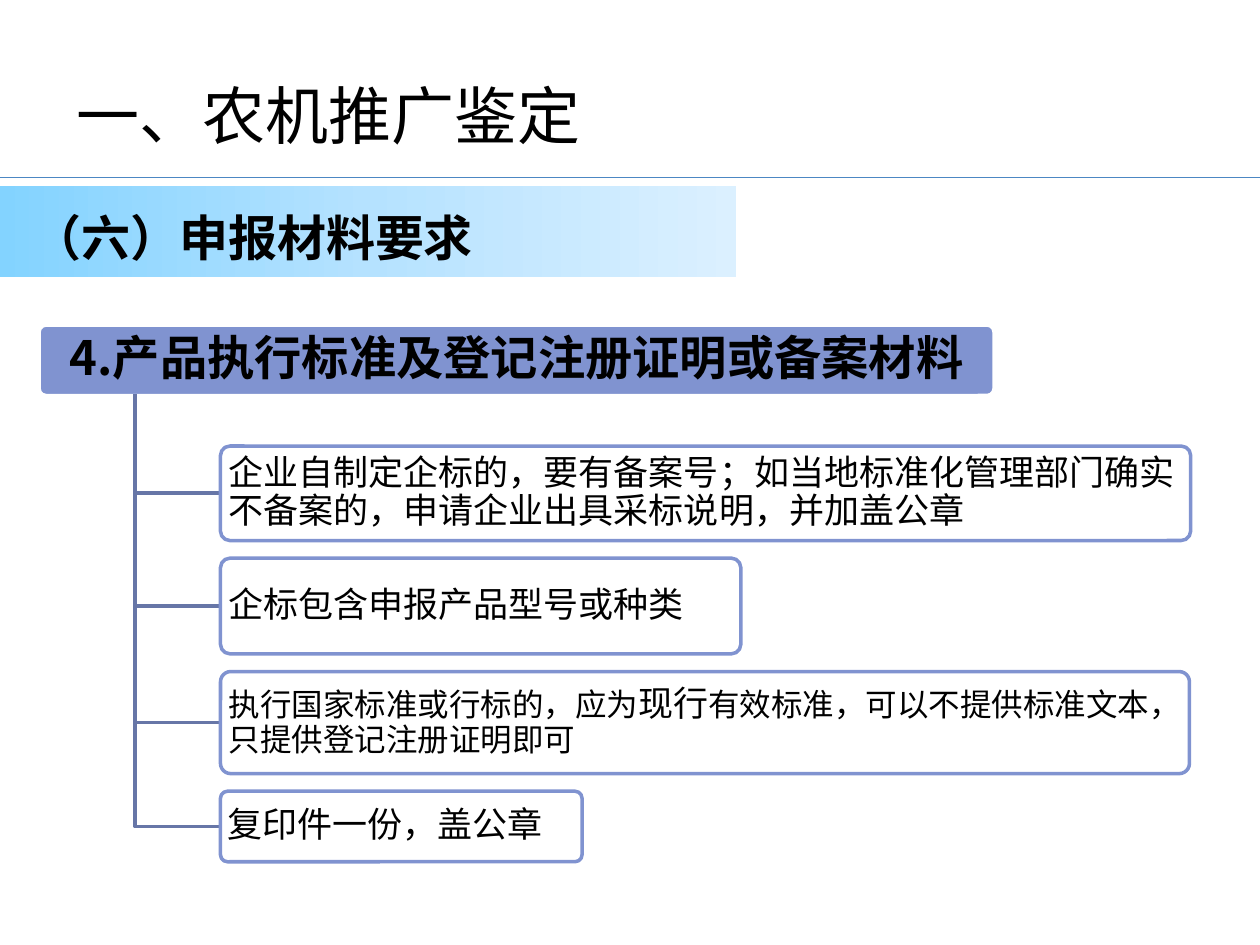
from copy import deepcopy
from dataclasses import dataclass

from lxml.etree import SubElement
from pptx import Presentation
from pptx.dml.color import RGBColor
from pptx.enum.shapes import MSO_CONNECTOR, MSO_SHAPE
from pptx.enum.text import MSO_ANCHOR, PP_ALIGN
from pptx.oxml.ns import qn
from pptx.util import Inches, Pt


@dataclass(frozen=True)
class Theme:
    font: str = "Noto Sans CJK SC"
    ink: str = "000000"
    paper: str = "FFFFFF"
    rule: str = "4C87C3"
    blue: str = "8093D0"
    branch: str = "6776A7"
    band: tuple = ((0, "83D3FF"), (0.5, "B5E2FF"), (1, "DBF0FF"))
    title: int = 36
    section: int = 28
    head: int = 27
    body: int = 20
    small: int = 18


@dataclass(frozen=True)
class Item:
    top: float
    width: float
    height: float
    runs: tuple  # (text, size) pairs


LOOK = Theme()
TRUNK, ROOT, LEFT = 1.07, 3.13, 1.75  # trunk x, trunk top, item left

ITEMS = (
    Item(3.54, 7.7, 0.75, (
        ("企业自制定企标的，要有备案号；如当地标准化管理部门确实"
         "不备案的，申请企业出具采标说明，并加盖公章", LOOK.body),)),
    Item(4.43, 4.13, 0.76, (("企标包含申报产品型号或种类", LOOK.body),)),
    Item(5.33, 7.69, 0.81, (
        ("执行国家标准或行标的，应为", LOOK.small),
        ("现行", LOOK.body),
        ("有效标准，可以不提供标准文本，只提供登记注册证明即可", LOOK.small))),
    Item(6.28, 2.87, 0.56, (("复印件一份，盖公章", LOOK.body),)),
)


def color(code: str) -> RGBColor:
    return RGBColor.from_string(code)


def write(shape, runs: tuple, pads: tuple, bold: bool = False,
          align=PP_ALIGN.LEFT, anchor=MSO_ANCHOR.MIDDLE, lead: float = 1.0) -> None:
    """Fill a shape with one paragraph; pads are the side and end insets."""
    frame = shape.text_frame
    frame.word_wrap = True
    frame.vertical_anchor = anchor
    frame.margin_left = frame.margin_right = Inches(pads[0])
    frame.margin_top = frame.margin_bottom = Inches(pads[1])
    para = frame.paragraphs[0]
    para.alignment = align
    para.line_spacing = lead
    font = para.font
    font.name, font.bold = LOOK.font, bold
    font.color.rgb = color(LOOK.ink)
    same = len({size for _, size in runs}) == 1
    if same:
        font.size = Pt(runs[0][1])
    for text, size in runs:
        run = para.add_run()
        run.text = text
        run.font.color.rgb = color(LOOK.ink)
        if not same:
            run.font.size = Pt(size)
        # East Asian typeface
        SubElement(run.font._element, qn("a:ea")).set("typeface", LOOK.font)


def panel(slide, box: tuple, fill: str, edge: str):
    shape = slide.shapes.add_shape(MSO_SHAPE.ROUNDED_RECTANGLE, *map(Inches, box))
    shape.adjustments[0] = 0.1
    shape.shadow.inherit = False
    shape.fill.solid()
    shape.fill.fore_color.rgb = color(fill)
    shape.line.color.rgb = color(edge)
    shape.line.width = Pt(2)
    return shape


def branch(slide, end: float) -> None:
    """Draw an elbow from the trunk top to the middle of an item's left side."""
    pen = slide.shapes.build_freeform(Inches(TRUNK), Inches(ROOT))
    pen.add_line_segments([(Inches(TRUNK), Inches(end)),
                           (Inches(LEFT), Inches(end))], close=False)
    shape = pen.convert_to_shape()
    shape.shadow.inherit = False
    shape.fill.background()
    shape.line.color.rgb = color(LOOK.branch)
    shape.line.width = Pt(2)


def band(slide) -> None:
    shape = slide.shapes.add_shape(MSO_SHAPE.RECTANGLE, 0, Inches(1.48),
                                   Inches(5.84), Inches(0.72))
    shape.shadow.inherit = False
    shape.line.fill.background()
    shape.fill.gradient()
    shape.fill.gradient_angle = 0
    first = shape._element.spPr.find(".//" + qn("a:gs"))
    first.addnext(deepcopy(first))
    for stop, (place, code) in zip(shape.fill.gradient_stops, LOOK.band):
        stop.position = place
        stop.color.rgb = color(code)


def main() -> None:
    deck = Presentation()
    deck.slide_width, deck.slide_height = Inches(10), Inches(7.5)
    slide = deck.slides.add_slide(deck.slide_layouts[6])

    # Title and rule
    title = slide.shapes.add_textbox(*map(Inches, (-0.08, 0.47, 9, 0.88)))
    write(title, (("一、农机推广鉴定", LOOK.title),), (0.69, 0.05))
    rule = slide.shapes.add_connector(MSO_CONNECTOR.STRAIGHT, 0, Inches(1.41),
                                      Inches(10), Inches(1.41))
    rule.line.color.rgb = color(LOOK.rule)
    rule.line.width = Pt(0.75)
    SubElement(rule._element.spPr, qn("a:effectLst"))

    # Section band
    band(slide)
    label = slide.shapes.add_textbox(*map(Inches, (0.16, 1.6, 5.31, 0.57)))
    write(label, (("（六）申报材料要求", LOOK.section),), (0.1, 0.05),
          bold=True, anchor=MSO_ANCHOR.TOP)

    # Tree head
    head = panel(slide, (0.31, 2.58, 7.58, 0.56), LOOK.blue, LOOK.paper)
    write(head, (("4.产品执行标准及登记注册证明或备案材料", LOOK.head),),
          (0.06, 0.04), bold=True, align=PP_ALIGN.CENTER, lead=0.9)

    # Tree items
    for item in ITEMS:
        branch(slide, item.top + item.height / 2)
        shape = panel(slide, (LEFT, item.top, item.width, item.height),
                      LOOK.paper, LOOK.blue)
        write(shape, item.runs, (0.04, 0.03), lead=0.9)

    deck.save("out.pptx")


if __name__ == "__main__":
    main()
